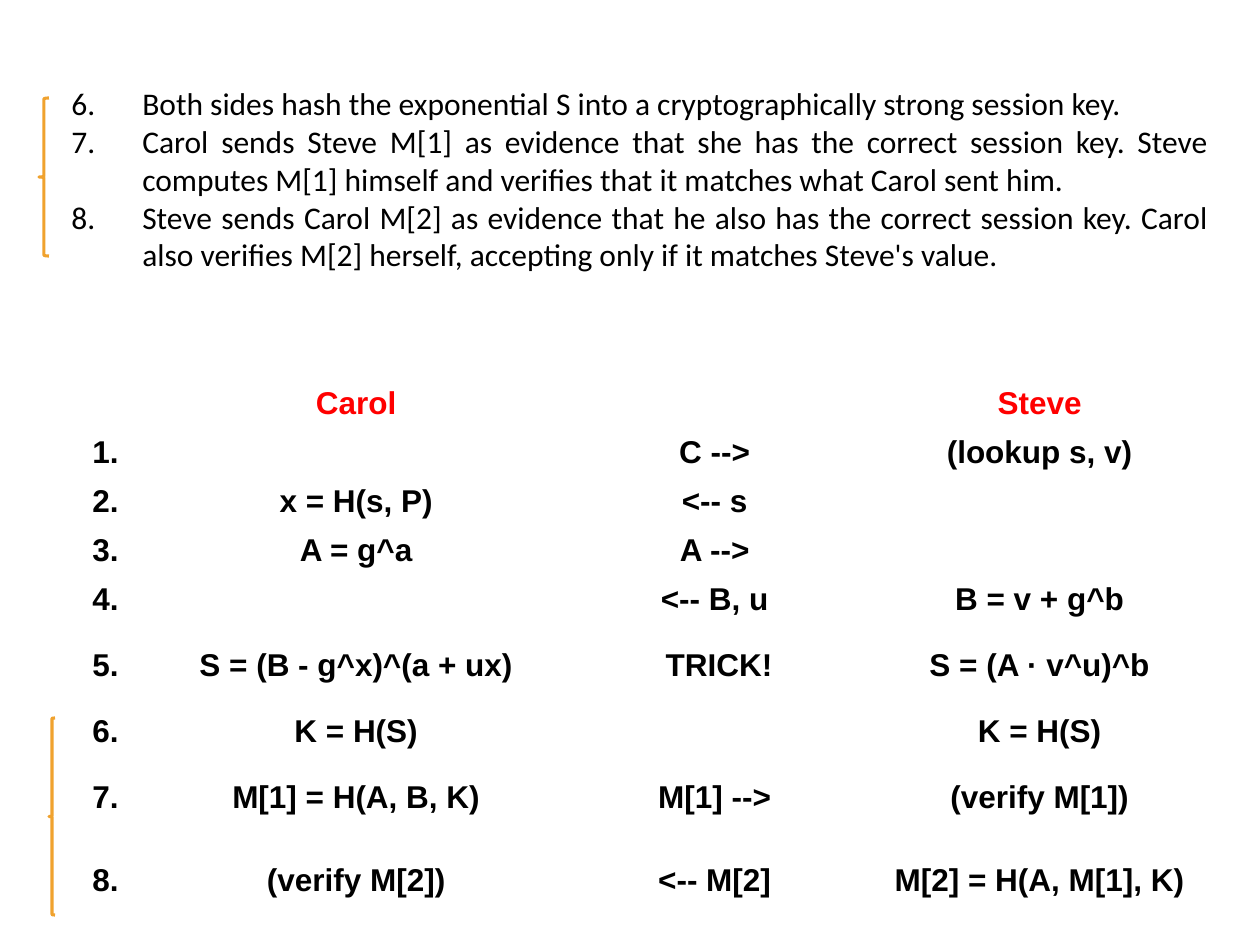
from dataclasses import dataclass

from lxml.etree import SubElement
from pptx import Presentation
from pptx.dml.color import RGBColor
from pptx.enum.shapes import MSO_SHAPE as Shape
from pptx.enum.text import MSO_ANCHOR as Anchor, MSO_AUTO_SIZE as AutoSize, PP_ALIGN as Align
from pptx.oxml.ns import qn
from pptx.util import Pt


@dataclass(frozen=True)
class Theme:
    text: RGBColor = RGBColor(0, 0, 0)
    heading: RGBColor = RGBColor(255, 0, 0)
    brace: RGBColor = RGBColor(0xF0, 0xA2, 0x2E)
    body_font: str = "Calibri"
    table_font: str = "Arial"
    size: Pt = Pt(18)
    brace_width: Pt = Pt(1.75)


THEME = Theme()
PX_PER_INCH = 126

FIRST_STEP = 6
STEPS = [
    "Both sides hash the exponential S into a cryptographically strong session key.",
    "Carol sends Steve M[1] as evidence that she has the correct session key. "
    "Steve computes M[1] himself and verifies that it matches what Carol sent him.",
    "Steve sends Carol M[2] as evidence that he also has the correct session key. "
    "Carol also verifies M[2] herself, accepting only if it matches Steve's value.",
]

EXCHANGE = [
    ("", "Carol ", "", "Steve "),
    ("1. ", "", "C --> ", "(lookup s, v) "),
    ("2. ", "x = H(s, P) ", "<-- s ", ""),
    ("3. ", "A = g^a ", "A --> ", ""),
    ("4. ", "", "<-- B, u ", "B = v + g^b "),
    ("5. ", "S = (B - g^x)^(a + ux) ", "TRICK!", "S = (A · v^u)^b "),
    ("6. ", "K = H(S) ", "", "K = H(S) "),
    ("7. ", "M[1] = H(A, B, K) ", "M[1] --> ", "(verify M[1]) "),
    ("8. ", "(verify M[2]) ", "<-- M[2] ", "M[2] = H(A, M[1], K) "),
]
COLUMN_WIDTHS = (71, 441, 276, 374)
ROW_HEIGHT, TALL_ROW_HEIGHT = 49, 83
TALL_ROWS = (5, 7, 8)


def px(length):
    return round(length * 914400 / PX_PER_INCH)


def format_runs(paragraph, font_name, color, bold=False):
    for run in paragraph.runs:
        run.font.name = font_name
        run.font.size = THEME.size
        run.font.bold = bold
        run.font.color.rgb = color


def number_paragraph(paragraph, start, indent):
    properties = paragraph._p.get_or_add_pPr()
    properties.set("marL", str(px(indent)))
    properties.set("indent", str(-px(indent)))
    SubElement(properties, qn("a:buAutoNum"), type="arabicPeriod", startAt=str(start))


def add_steps(slide, left, top, width, height):
    box = slide.shapes.add_textbox(px(left), px(top), px(width), px(height))
    frame = box.text_frame
    frame.word_wrap = True
    frame.auto_size = AutoSize.SHAPE_TO_FIT_TEXT
    frame.text = "\n".join(STEPS)
    for paragraph in frame.paragraphs:
        paragraph.alignment = Align.JUSTIFY
        number_paragraph(paragraph, FIRST_STEP, indent=71)
        format_runs(paragraph, THEME.body_font, THEME.text)


def fill_cell(cell, text, alignment, color):
    cell.fill.background()
    cell.vertical_anchor = Anchor.MIDDLE
    cell.text = text
    paragraph = cell.text_frame.paragraphs[0]
    paragraph.alignment = alignment
    format_runs(paragraph, THEME.table_font, color, bold=True)
    if not text:
        # A small end mark keeps an empty cell from stretching its row
        paragraph._p.get_or_add_endParaRPr().set("sz", "1200")


def add_exchange_table(slide, left, top):
    heights = [TALL_ROW_HEIGHT if row in TALL_ROWS else ROW_HEIGHT
               for row in range(len(EXCHANGE))]
    table = slide.shapes.add_table(
        len(EXCHANGE), len(COLUMN_WIDTHS),
        px(left), px(top), px(sum(COLUMN_WIDTHS)), px(sum(heights))).table
    table.first_row = table.horz_banding = False
    for column, width in zip(table.columns, COLUMN_WIDTHS):
        column.width = px(width)
    for row_index, (row, height, texts) in enumerate(zip(table.rows, heights, EXCHANGE)):
        row.height = px(height)
        color = THEME.text if row_index else THEME.heading
        for column_index, (cell, text) in enumerate(zip(row.cells, texts)):
            fill_cell(cell, text, Align.CENTER if column_index else Align.RIGHT, color)


def add_brace(slide, left, top, width, height):
    brace = slide.shapes.add_shape(
        Shape.LEFT_BRACE, px(left), px(top), px(width), px(height))
    brace.shadow.inherit = False
    brace.fill.background()
    brace.line.color.rgb = THEME.brace
    brace.line.width = THEME.brace_width


def main():
    presentation = Presentation()
    presentation.slide_width, presentation.slide_height = px(1260), px(945)
    slide = presentation.slides.add_slide(presentation.slide_layouts[6])

    # Message exchange and the explanation of its last steps
    add_exchange_table(slide, 69, 379)
    add_steps(slide, 59, 78, 1162, 204)

    # Braces marking steps 6 to 8 in both regions
    add_brace(slide, 39, 98, 10, 158)
    add_brace(slide, 49, 718, 6, 197)

    presentation.save("out.pptx")


if __name__ == "__main__":
    main()
